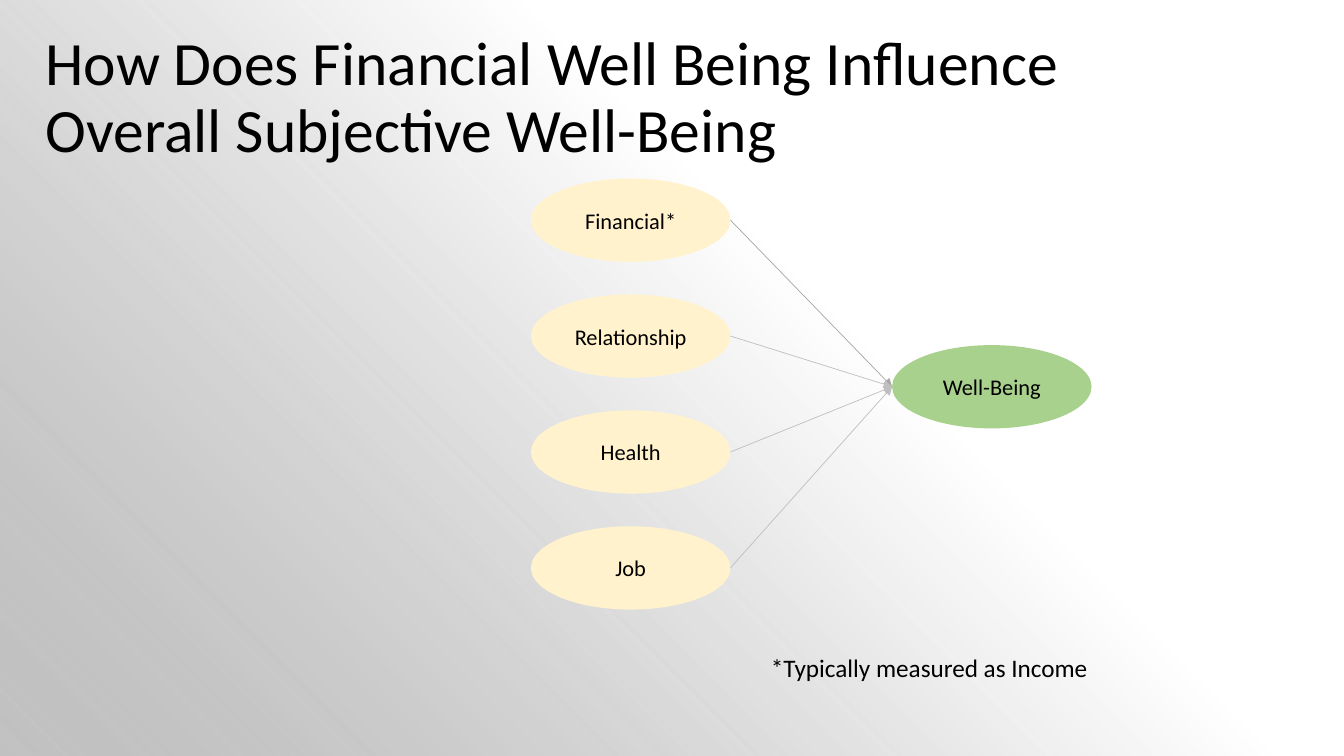
"""Build a slide linking four life domains to overall well-being."""
from copy import deepcopy
from dataclasses import dataclass

from pptx import Presentation
from pptx.dml.color import RGBColor
from pptx.enum import shapes, text
from pptx.oxml import ns, xmlchemy
from pptx.util import Pt

BLACK = RGBColor(0x00, 0x00, 0x00)
WHITE = RGBColor(0xFF, 0xFF, 0xFF)
CREAM = RGBColor(0xFF, 0xF2, 0xCC)
GREEN = RGBColor(0xA9, 0xD1, 0x8E)
BACKDROP_GREY = RGBColor(0xA5, 0xA5, 0xA5)
MID_GREY = RGBColor(0xA6, 0xA6, 0xA6)
LIGHT_GREY = RGBColor(0xBF, 0xBF, 0xBF)

FONT = "Calibri"
SLIDE_W, SLIDE_H = 960, 540
OVAL_W, OVAL_H = 142.5, 59.5
DOMAIN_LEFT, DOMAIN_TOP, DOMAIN_PITCH = 379.25, 127.5, 82.8


@dataclass(frozen=True)
class Oval:
    label: str
    left: float
    top: float
    fill: RGBColor

    @property
    def middle(self) -> float:
        return self.top + OVAL_H / 2


@dataclass(frozen=True)
class Domain:
    label: str
    arrow: RGBColor


DOMAINS = [
    Domain("Financial*", MID_GREY),
    Domain("Relationship", LIGHT_GREY),
    Domain("Health", LIGHT_GREY),
    Domain("Job", LIGHT_GREY),
]
WELL_BEING = Oval("Well-Being", 637.2, 246.5, GREEN)


def write(tf, content: str, size: float, align) -> None:
    tf.text = content
    tf.word_wrap = True
    p = tf.paragraphs[0]
    p.alignment = align
    r = p.runs[0]
    r.font.name = FONT
    r.font.size = Pt(size)
    r.font.color.rgb = BLACK


def add_backdrop(s, depth: int) -> None:
    sp = s.shapes.add_shape(shapes.MSO_SHAPE.RECTANGLE, 0, 0, Pt(SLIDE_W), Pt(SLIDE_H))
    sp.shadow.inherit = False
    sp.line.fill.background()
    sp.fill.gradient()
    sp.fill.gradient_angle = 225
    start, end = sp.fill.gradient_stops
    start.color.rgb, start.position = WHITE, 0
    end.color.rgb, end.position = BACKDROP_GREY, 1
    first, last = sp._element.iter(ns.qn("a:gs"))
    plateau = deepcopy(first)
    plateau.set("pos", "39000")
    first.addnext(plateau)
    alpha = xmlchemy.OxmlElement("a:alpha")
    alpha.set("val", "43000")
    last[0].append(alpha)
    s.shapes._spTree.insert(2 + depth, sp._element)


def add_title(s) -> None:
    sp = s.shapes.title
    sp.left, sp.top, sp.width, sp.height = Pt(25.2), Pt(18.7), Pt(828), Pt(104.4)
    tf = sp.text_frame
    write(tf, "How Does Financial Well Being Influence Overall Subjective Well-Being",
          44, text.PP_ALIGN.LEFT)
    tf.auto_size = text.MSO_AUTO_SIZE.NONE
    tf.vertical_anchor = text.MSO_ANCHOR.MIDDLE
    tf.paragraphs[0].line_spacing = 0.9


def add_oval(s, oval: Oval) -> None:
    sp = s.shapes.add_shape(shapes.MSO_SHAPE.OVAL, Pt(oval.left), Pt(oval.top),
                            Pt(OVAL_W), Pt(OVAL_H))
    sp.shadow.inherit = False
    sp.fill.solid()
    sp.fill.fore_color.rgb = oval.fill
    sp.line.fill.background()
    write(sp.text_frame, oval.label, 16, text.PP_ALIGN.CENTER)
    sp.text_frame.vertical_anchor = text.MSO_ANCHOR.MIDDLE


def add_arrow(s, source: Oval, target: Oval, color: RGBColor) -> None:
    cxn = s.shapes.add_connector(shapes.MSO_CONNECTOR.STRAIGHT,
                                 Pt(source.left + OVAL_W), Pt(source.middle),
                                 Pt(target.left), Pt(target.middle))
    cxn.line.color.rgb = color
    cxn.line.width = Pt(0.5)
    head = xmlchemy.OxmlElement("a:tailEnd")
    head.set("type", "triangle")
    cxn.line._get_or_add_ln().append(head)
    cxn._element.spPr.append(xmlchemy.OxmlElement("a:effectLst"))


def add_footnote(s) -> None:
    sp = s.shapes.add_textbox(Pt(543.6), Pt(462.25), Pt(260), Pt(29))
    write(sp.text_frame, "*Typically measured as Income", 18, text.PP_ALIGN.LEFT)
    sp.text_frame.auto_size = text.MSO_AUTO_SIZE.SHAPE_TO_FIT_TEXT


def main() -> None:
    prs = Presentation()
    prs.slide_width, prs.slide_height = Pt(SLIDE_W), Pt(SLIDE_H)
    s = prs.slides.add_slide(prs.slide_layouts[5])
    for depth in range(2):
        add_backdrop(s, depth)
    add_title(s)
    add_oval(s, WELL_BEING)
    for row, domain in enumerate(DOMAINS):
        oval = Oval(domain.label, DOMAIN_LEFT, DOMAIN_TOP + row * DOMAIN_PITCH, CREAM)
        add_oval(s, oval)
        add_arrow(s, oval, WELL_BEING, domain.arrow)
    add_footnote(s)
    prs.save("out.pptx")


if __name__ == "__main__":
    main()
